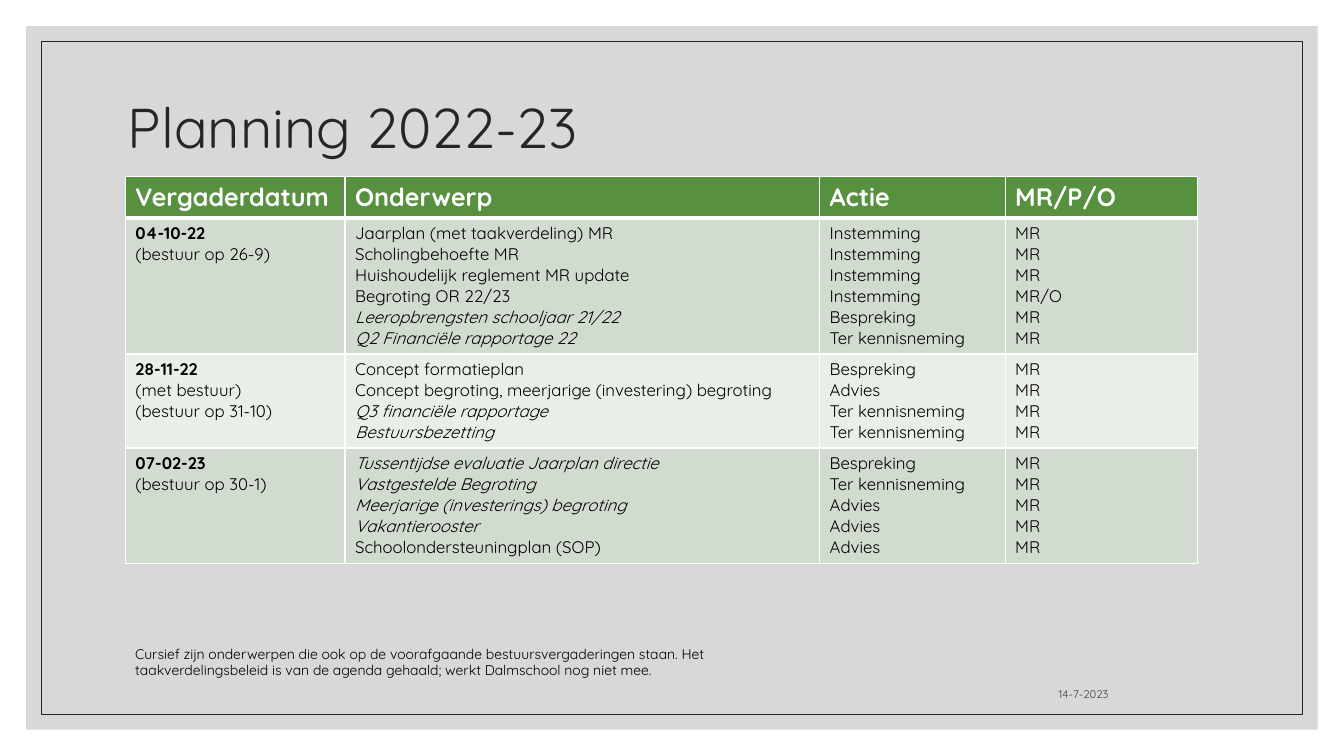
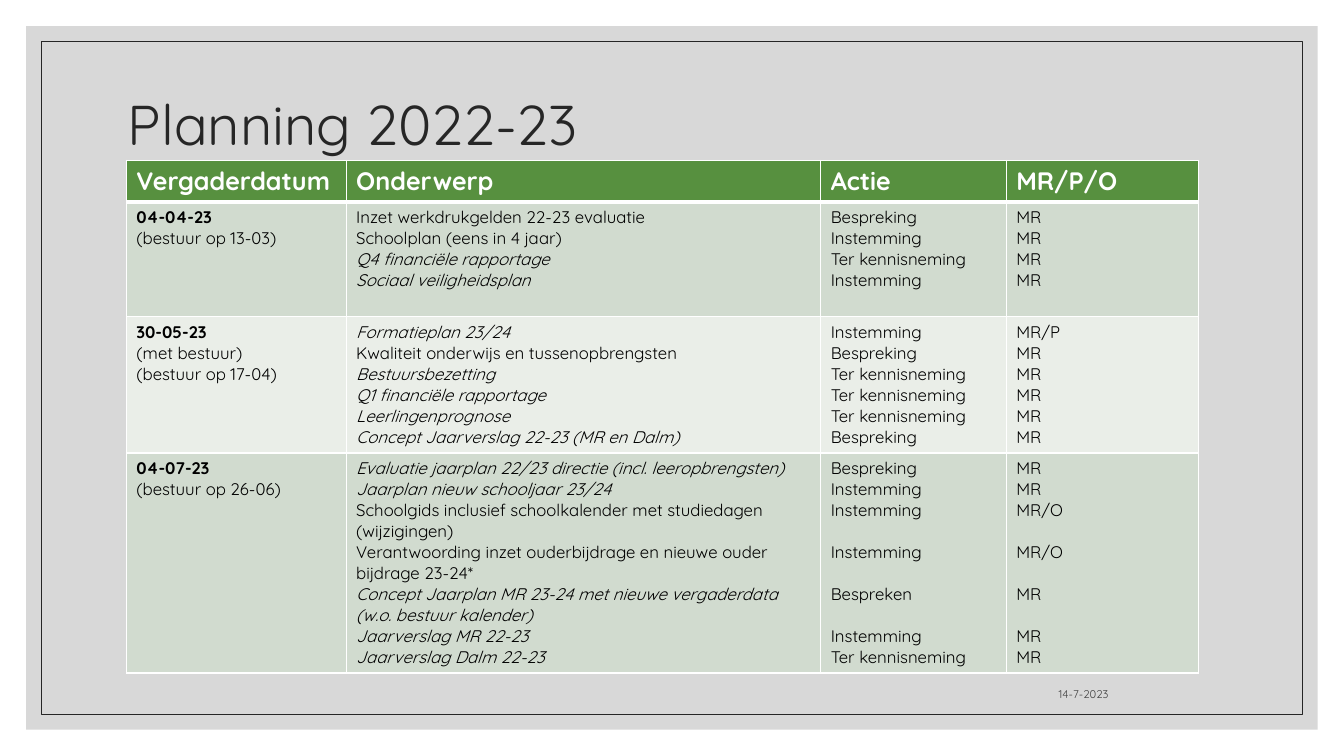
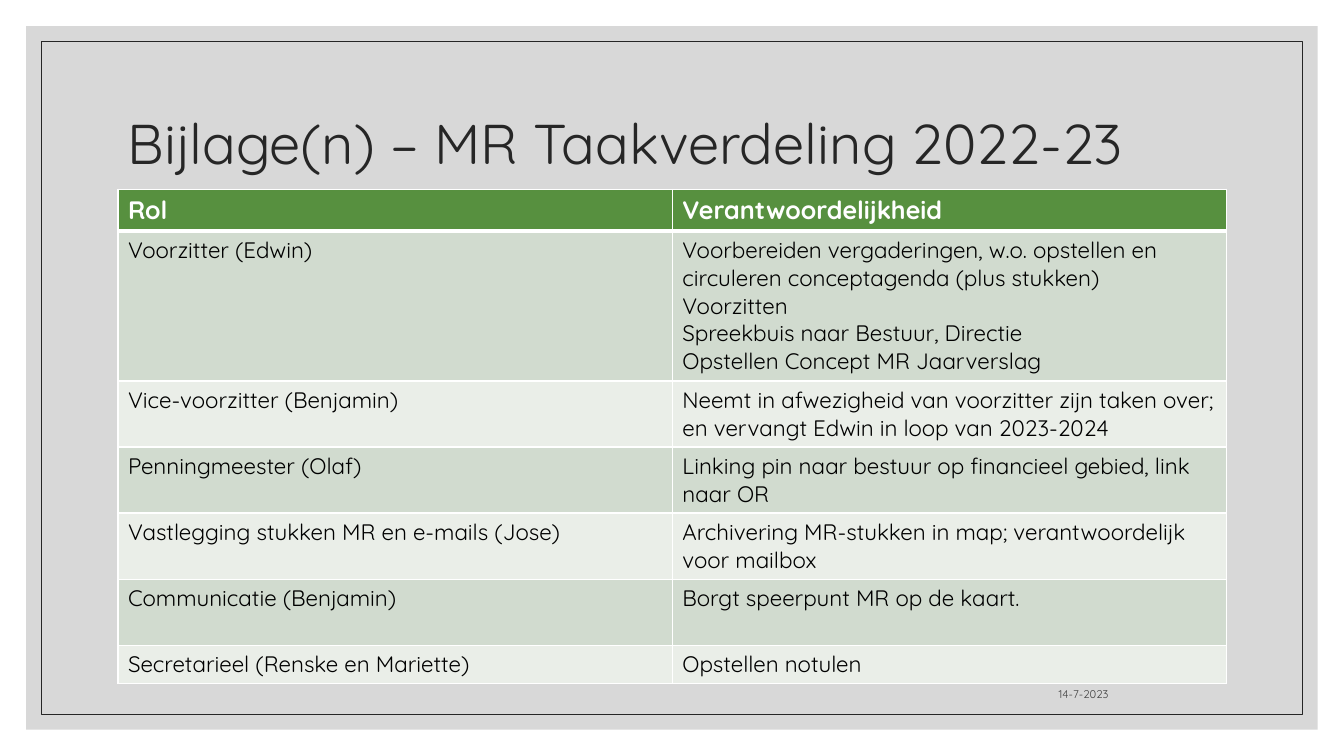
from typing import NamedTuple

from lxml import etree
from pptx import Presentation
from pptx.dml.color import RGBColor
from pptx.enum import shapes, text
from pptx.oxml import ns
from pptx.util import Pt

FONT = "Quicksand"
WHITE = RGBColor(0xFF, 0xFF, 0xFF)
BLACK = RGBColor(0x00, 0x00, 0x00)
GREY = RGBColor(0xBF, 0xBF, 0xBF)
DARK = RGBColor(0x26, 0x26, 0x26)
DATE_GREY = RGBColor(0x40, 0x40, 0x40)
GREEN = RGBColor(0x57, 0x90, 0x3F)
BANDS = (RGBColor(0xD1, 0xDB, 0xCF), RGBColor(0xEA, 0xEE, 0xE8))

SLIDE_WIDTH, SLIDE_HEIGHT = 960, 540
TITLE_LEFT, TITLE_WIDTH, TITLE_HEIGHT = 84.25, 792, 108
HEADER_SIZE, MEETING_SIZE, ROLE_SIZE = 18, 12, 16
LINE_FACTOR = 1.25
CELL_PADDING = 7.2
PLANNING_COLUMNS = (157, 339, 132.5, 137.5)
PLANNING_HEADER = ("Vergaderdatum", "Onderwerp", "Actie", "MR/P/O")
ROLE_COLUMNS = (396, 396)
ROLE_HEADER = ("Rol", "Verantwoordelijkheid")


class Line(NamedTuple):
    """One paragraph of a table cell."""
    text: str
    bold: bool = False
    italic: bool = False
    space_before: float = 0


class Topic(NamedTuple):
    """One agenda topic; italic when the board discusses it first."""
    text: str
    action: str
    group: str = "MR"
    italic: bool = False
    lines: int = 1


class Meeting(NamedTuple):
    """One meeting with its notes, topics and number of text lines."""
    date: str
    notes: tuple
    lines: int
    topics: tuple


class Role(NamedTuple):
    """One role with its duties and number of text lines."""
    name: str
    duties: tuple
    lines: int


def board(topic, action, group="MR", lines=1):
    """Return a topic that is also on the board's agenda."""
    return Topic(topic, action, group, True, lines)


AUTUMN_MEETINGS = (
    Meeting("04-10-22", ("(bestuur op 26-9)",), 6, (
        Topic("Jaarplan (met taakverdeling) MR", "Instemming"),
        Topic("Scholingbehoefte MR", "Instemming"),
        Topic("Huishoudelijk reglement MR update", "Instemming"),
        Topic("Begroting OR 22/23", "Instemming", "MR/O"),
        board("Leeropbrengsten schooljaar 21/22", "Bespreking"),
        board("Q2 Financiële rapportage 22", "Ter kennisneming"))),
    Meeting("28-11-22", ("(met bestuur)", "(bestuur op 31-10)"), 4, (
        Topic("Concept formatieplan", "Bespreking"),
        Topic("Concept begroting, meerjarige (investering) begroting", "Advies"),
        board("Q3 financiële rapportage", "Ter kennisneming"),
        board("Bestuursbezetting", "Ter kennisneming"))),
    Meeting("07-02-23", ("(bestuur op 30-1)",), 5, (
        board("Tussentijdse evaluatie Jaarplan directie", "Bespreking"),
        board("Vastgestelde Begroting", "Ter kennisneming"),
        board("Meerjarige (investerings) begroting", "Advies"),
        board("Vakantierooster", "Advies"),
        Topic("Schoolondersteuningplan (SOP)", "Advies"))),
)

SPRING_MEETINGS = (
    Meeting("04-04-23", ("(bestuur op 13-03)",), 5, (
        Topic("Inzet werkdrukgelden 22-23 evaluatie", "Bespreking"),
        Topic("Schoolplan (eens in 4 jaar)", "Instemming"),
        board("Q4 financiële rapportage", "Ter kennisneming"),
        board("Sociaal veiligheidsplan", "Instemming"))),
    Meeting("30-05-23", ("(met bestuur)", "(bestuur op 17-04)"), 6, (
        board("Formatieplan 23/24", "Instemming", "MR/P"),
        Topic("Kwaliteit onderwijs en tussenopbrengsten", "Bespreking"),
        board("Bestuursbezetting", "Ter kennisneming"),
        board("Q1 financiële rapportage", "Ter kennisneming"),
        board("Leerlingenprognose", "Ter kennisneming"),
        board("Concept Jaarverslag 22-23 (MR en Dalm)", "Bespreking"))),
    Meeting("04-07-23", ("(bestuur op 26-06)",), 10, (
        board("Evaluatie jaarplan 22/23 directie (incl. leeropbrengsten)", "Bespreking"),
        board("Jaarplan nieuw schooljaar 23/24", "Instemming"),
        Topic("Schoolgids inclusief schoolkalender met studiedagen (wijzigingen)",
              "Instemming", "MR/O", lines=2),
        Topic("Verantwoording inzet ouderbijdrage en nieuwe ouder bijdrage 23-24*",
              "Instemming", "MR/O", lines=2),
        board("Concept Jaarplan MR 23-24 met nieuwe vergaderdata (w.o. bestuur kalender)",
              "Bespreken", lines=2),
        board("Jaarverslag MR 22-23", "Instemming"),
        board("Jaarverslag Dalm 22-23", "Ter kennisneming"))),
)

ROLES = (
    Role("Voorzitter (Edwin)", (
        "Voorbereiden vergaderingen, w.o. opstellen en circuleren conceptagenda (plus stukken)",
        "Voorzitten", "Spreekbuis naar Bestuur, Directie", "Opstellen Concept MR Jaarverslag"), 5),
    Role("Vice-voorzitter (Benjamin)", (
        "Neemt in afwezigheid van voorzitter zijn taken over; "
        "en vervangt Edwin in loop van 2023-2024",), 2),
    Role("Penningmeester (Olaf)", (
        "Linking pin naar bestuur op financieel gebied, link naar OR",), 2),
    Role("Vastlegging stukken MR en e-mails (Jose)", (
        "Archivering MR-stukken in map; verantwoordelijk voor mailbox",), 2),
    Role("Communicatie (Benjamin)", ("Borgt speerpunt MR op de kaart.",), 2),
    Role("Secretarieel (Renske en Mariette)", ("Opstellen notulen",), 1),
)


def add_run(paragraph, words, size, color, bold=False, italic=False):
    """Append one styled run to a paragraph."""
    run = paragraph.add_run()
    run.text = words
    font = run.font
    font.name, font.size, font.bold, font.italic = FONT, Pt(size), bold, italic
    font.color.rgb = color


def add_text(slide, box, words, size, color, anchor=text.MSO_ANCHOR.TOP,
             align=text.PP_ALIGN.LEFT, spacing=1.0):
    """Place a one-paragraph text box."""
    frame = slide.shapes.add_textbox(*map(Pt, box)).text_frame
    frame.word_wrap = True
    frame.vertical_anchor = anchor
    paragraph = frame.paragraphs[0]
    paragraph.alignment, paragraph.line_spacing = align, spacing
    add_run(paragraph, words, size, color)


def add_panel(slide, margin):
    """Place an unfilled rectangle at an equal margin from the slide edges."""
    panel = slide.shapes.add_shape(
        shapes.MSO_SHAPE.RECTANGLE, Pt(margin), Pt(margin),
        Pt(SLIDE_WIDTH - 2 * margin), Pt(SLIDE_HEIGHT - 2 * margin))
    panel.shadow.inherit = False
    panel.fill.background()
    panel.line.fill.background()
    return panel


def add_base_slide(presentation, title, title_top):
    """Add a slide with the shared background, frame, title and date."""
    slide = presentation.slides.add_slide(presentation.slide_layouts[6])
    background = add_panel(slide, 18.75)
    background.fill.solid()
    background.fill.fore_color.rgb = GREY
    color = background.fill._xPr.find(".//" + ns.qn("a:srgbClr"))
    etree.SubElement(color, ns.qn("a:alpha"), val="60000")
    frame = add_panel(slide, 29.5)
    frame.line.color.rgb = DARK
    frame.line.width = Pt(0.5)
    add_text(slide, (TITLE_LEFT, title_top, TITLE_WIDTH, TITLE_HEIGHT), title, 40, DARK,
             text.MSO_ANCHOR.MIDDLE, spacing=0.9)
    add_text(slide, (571.5, 475, 227.5, 29), "14-7-2023", 8, DATE_GREY,
             text.MSO_ANCHOR.BOTTOM, text.PP_ALIGN.RIGHT)
    return slide


def set_borders(cell, top, bottom):
    """Give a cell white borders of the stated top and bottom widths."""
    properties = cell._tc.get_or_add_tcPr()
    widths = {"lnL": 1, "lnR": 1, "lnT": top, "lnB": bottom}
    for index, (tag, width) in enumerate(widths.items()):
        line = etree.Element(ns.qn("a:" + tag), w=str(Pt(width)))
        fill = etree.SubElement(line, ns.qn("a:solidFill"))
        etree.SubElement(fill, ns.qn("a:srgbClr"), val=str(WHITE))
        properties.insert(index, line)


def fill_cell(cell, lines, size, color, fill):
    """Write the lines into a cell and colour it."""
    cell.fill.solid()
    cell.fill.fore_color.rgb = fill
    for index, line in enumerate(lines):
        frame = cell.text_frame
        paragraph = frame.add_paragraph() if index else frame.paragraphs[0]
        paragraph.space_before = Pt(line.space_before)
        add_run(paragraph, line.text, size, color, line.bold, line.italic)


def row_height(lines, size):
    """Return the height of a row with this many text lines."""
    return lines * size * LINE_FACTOR + CELL_PADDING


def add_banded_table(slide, left, top, columns, header, rows, line_counts, size):
    """Place a table with a green header and alternating row colours."""
    heights = [row_height(1, HEADER_SIZE)] + [row_height(count, size) for count in line_counts]
    table = slide.shapes.add_table(len(heights), len(columns), Pt(left), Pt(top),
                                   Pt(sum(columns)), Pt(sum(heights))).table
    for column, width in zip(table.columns, columns):
        column.width = Pt(width)
    header_cells = [[Line(label, bold=True)] for label in header]
    for index, cells in enumerate([header_cells, *rows]):
        table.rows[index].height = Pt(heights[index])
        if index == 0:
            style = (HEADER_SIZE, WHITE, GREEN)
        else:
            style = (size, BLACK, BANDS[(index - 1) % 2])
        for cell, lines in zip(table.rows[index].cells, cells):
            fill_cell(cell, lines, *style)
            set_borders(cell, 3 if index == 1 else 1, 3 if index == 0 else 1)


def meeting_cells(meeting):
    """Return the four cells of a meeting, aligned with its wrapped topics."""
    topics = meeting.topics
    gaps = [0] + [(topic.lines - 1) * MEETING_SIZE * LINE_FACTOR for topic in topics[:-1]]
    return (
        [Line(meeting.date, bold=True), *map(Line, meeting.notes)],
        [Line(topic.text, italic=topic.italic) for topic in topics],
        [Line(topic.action, space_before=gap) for topic, gap in zip(topics, gaps)],
        [Line(topic.group, space_before=gap) for topic, gap in zip(topics, gaps)],
    )


def add_planning_slide(presentation, title_top, left, top, meetings):
    """Add a slide with a table of meetings."""
    slide = add_base_slide(presentation, "Planning 2022-23", title_top)
    add_banded_table(slide, left, top, PLANNING_COLUMNS, PLANNING_HEADER,
                     [meeting_cells(meeting) for meeting in meetings],
                     [meeting.lines for meeting in meetings], MEETING_SIZE)
    return slide


def add_roles_slide(presentation):
    """Add the slide with the division of roles."""
    slide = add_base_slide(presentation, "Bijlage(n) – MR Taakverdeling 2022-23", 50.25)
    add_banded_table(slide, TITLE_LEFT, 135.25, ROLE_COLUMNS, ROLE_HEADER,
                     [([Line(role.name)], [Line(duty) for duty in role.duties]) for role in ROLES],
                     [role.lines for role in ROLES], ROLE_SIZE)


def main():
    """Build and save the presentation."""
    presentation = Presentation()
    presentation.slide_width, presentation.slide_height = Pt(SLIDE_WIDTH), Pt(SLIDE_HEIGHT)
    autumn = add_planning_slide(presentation, 39.5, 89.5, 126, AUTUMN_MEETINGS)
    add_text(autumn, (89.5, 457.25, 465, 31.5),
             "Cursief zijn onderwerpen die ook op de voorafgaande bestuursvergaderingen staan. "
             "Het taakverdelingsbeleid is van de agenda gehaald; werkt Dalmschool nog niet mee.",
             10, BLACK)
    add_planning_slide(presentation, 36.75, 90.25, 114.5, SPRING_MEETINGS)
    add_roles_slide(presentation)
    presentation.save("out.pptx")


if __name__ == "__main__":
    main()
